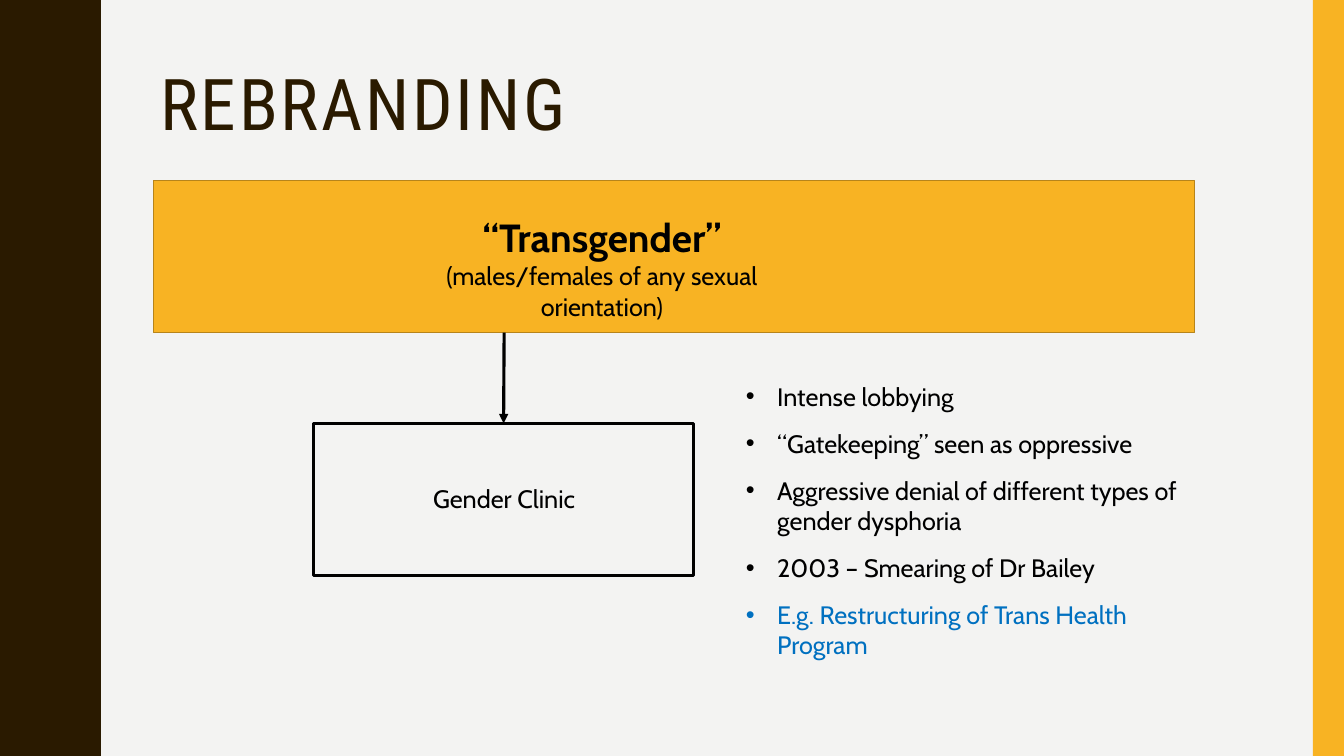
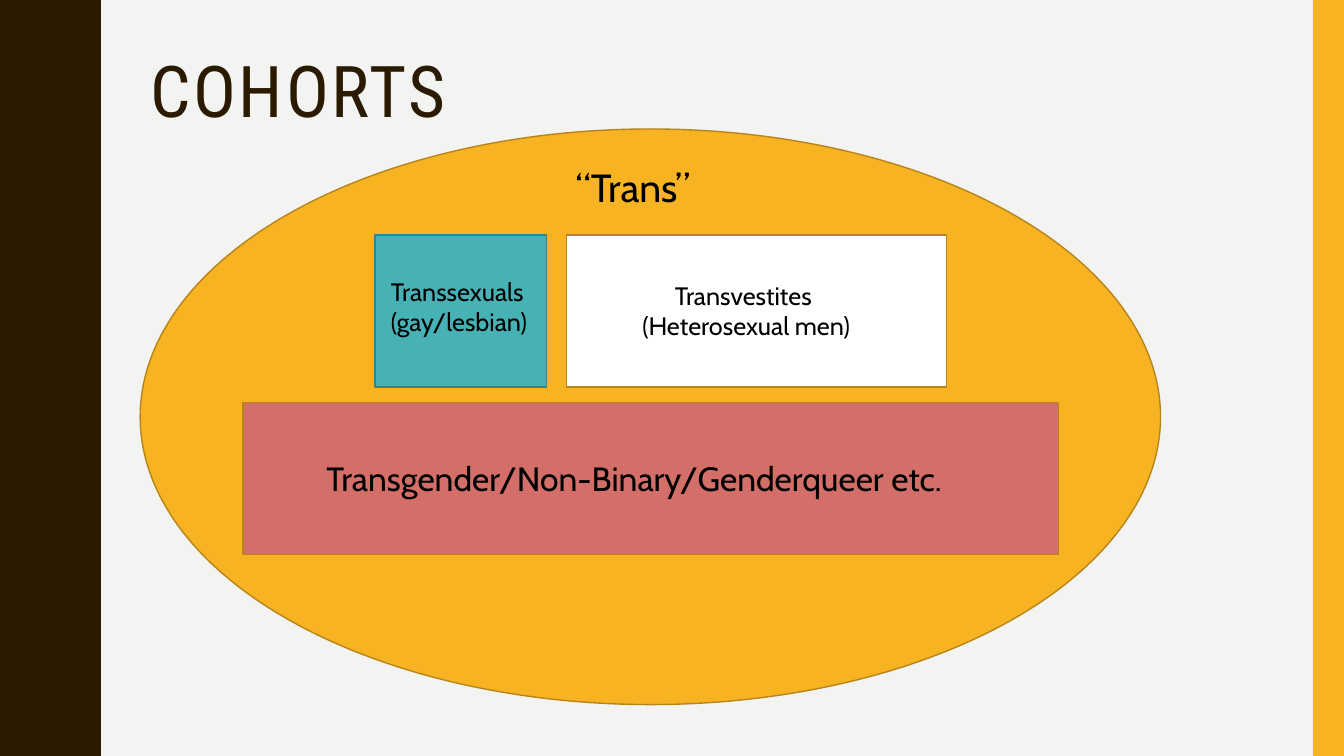
from lxml import etree
from pptx import Presentation
from pptx import util as u
from pptx.dml.color import RGBColor
from pptx.enum import shapes, text
from pptx.oxml import ns

DARK, GOLD, GOLD_EDGE = "2A1A00", "F8B323", "B7841A"
BLACK, BLUE, PAPER = "000000", "0070C0", "F3F3F2"
RECTANGLE, OVAL = shapes.MSO_SHAPE.RECTANGLE, shapes.MSO_SHAPE.OVAL
LEFT, CENTER = text.PP_ALIGN.LEFT, text.PP_ALIGN.CENTER
color = RGBColor.from_string


def add_box(page, place, fill, edge=None, width=1, kind=RECTANGLE):
    box = page.shapes.add_shape(kind, *map(u.Inches, place))
    box.shadow.inherit = False
    if fill:
        box.fill.solid()
        box.fill.fore_color.rgb = color(fill)
    else:
        box.fill.background()
    if edge:
        box.line.color.rgb = color(edge)
        box.line.width = u.Pt(width)
    else:
        box.line.fill.background()
    return box


def add_text(page, place, lines, size=18, align=CENTER, font="Cabin", ink=BLACK):
    frame = page.shapes.add_textbox(*map(u.Inches, place)).text_frame
    frame.word_wrap = True
    frame.text = "\n".join(lines)
    for para in frame.paragraphs:
        para.alignment = align
        para.font.size = u.Pt(size)
        para.font.name = font
        para.font.color.rgb = color(ink)
    return frame.paragraphs


deck = Presentation()
deck.slide_width, deck.slide_height = u.Inches(13.33), u.Inches(7.5)

half_wave = [(0.78, 0), (0.78, 0.07), (0.79, 0.14), (0.8, 0.2), (0.81, 0.25),
             (0.83, 0.29), (0.85, 0.33), (0.87, 0.38), (0.89, 0.42), (0.91, 0.46),
             (0.93, 0.5), (0.95, 0.55), (0.96, 0.61), (0.97, 0.68), (0.97, 0.75)]
wave = half_wave + [(x, 1.5 - y) for x, y in half_wave[-2::-1]]
band_outline = [(x, y + 1.5 * turn) for turn in range(5) for x, y in wave]

pages = []
for title, left, top in [("REBRANDING", 1.49, 0.63), ("COHORTS", 1.39, 0.51)]:
    page = deck.slides.add_slide(deck.slide_layouts[6])
    page.background.fill.solid()
    page.background.fill.fore_color.rgb = color(PAPER)
    builder = page.shapes.build_freeform(0, 0, scale=u.Inches(1))
    builder.add_line_segments(band_outline + [(0, 7.5)], close=True)
    band = builder.convert_to_shape()
    band.shadow.inherit = False
    band.fill.solid()
    band.fill.fore_color.rgb = color(DARK)
    band.line.fill.background()
    add_box(page, (13.02, 0, 0.31, 7.5), GOLD)
    para = add_text(page, (left, top, 11.13, 1.24), [title], 51, LEFT, "Roboto Condensed", DARK)[0]
    para.line_spacing = 0.9
    para.runs[0].font._element.set("spc", "200")
    pages.append(page)

rebranding, cohorts = pages

add_box(rebranding, (1.52, 1.79, 10.33, 1.51), GOLD, GOLD_EDGE)
heading = add_text(rebranding, (3.74, 2.07, 4.46, 0.88),
                   ["“Transgender”", "(males/females of any sexual orientation)"])[0]
heading.font.size = u.Pt(28)
heading.font.bold = True

clinic = add_box(rebranding, (3.11, 4.2, 3.77, 1.51), None, BLACK, 2.25)
add_text(rebranding, (3.31, 4.75, 3.38, 0.4), ["Gender Clinic"])
arrow = rebranding.shapes.add_connector(
    shapes.MSO_CONNECTOR.STRAIGHT, u.Inches(5), u.Inches(3.3), u.Inches(5), u.Inches(4.2))
arrow.end_connect(clinic, 0)
arrow.line.color.rgb = color(BLACK)
arrow.line.width = u.Pt(2.25)
etree.SubElement(arrow.line._get_or_add_ln(), ns.qn("a:tailEnd"), type="triangle")
etree.SubElement(arrow._element.spPr, ns.qn("a:effectLst"))

points = add_text(rebranding, (7.3, 3.73, 4.93, 3.06), [
    "Intense lobbying",
    "“Gatekeeping” seen as oppressive",
    "Aggressive denial of different types of gender dysphoria",
    "2003 – Smearing of Dr Bailey",
    "E.g. Restructuring of Trans Health Program",
], align=LEFT)
for para in points:
    para.space_after = u.Pt(12)
    properties = para._p.get_or_add_pPr()
    properties.set("marL", str(u.Inches(0.31)))
    properties.set("indent", str(-u.Inches(0.31)))
    bullet_font = etree.Element(ns.qn("a:buFont"), typeface="Arial")
    bullet = etree.Element(ns.qn("a:buChar"), char="•")
    properties.find(ns.qn("a:defRPr")).addprevious(bullet_font)
    bullet_font.addnext(bullet)
points[-1].font.color.rgb = color(BLUE)

add_box(cohorts, (1.39, 1.28, 10.12, 5.71), GOLD, GOLD_EDGE, kind=OVAL)
for left, top, width, fill, edge in [
    (3.72, 2.33, 1.7, "46B2B5", "348486"),
    (5.62, 2.33, 3.77, "FFFFFF", GOLD_EDGE),
    (2.41, 3.99, 8.09, "D36F68", GOLD_EDGE),
]:
    add_box(cohorts, (left, top, width, 1.51), fill, edge)

add_text(cohorts, (5.44, 2.73, 3.92, 0.71), ["Transvestites ", "(Heterosexual men)"])
add_text(cohorts, (3.78, 2.69, 1.64, 0.71), ["Transsexuals (gay/lesbian)"], align=LEFT)
add_text(cohorts, (3, 4.49, 6.58, 0.5), ["Transgender/Non-Binary/Genderqueer etc."], 24)
add_text(cohorts, (4.37, 1.57, 3.81, 0.57), ["“Trans”"], 28)

deck.save("out.pptx")
